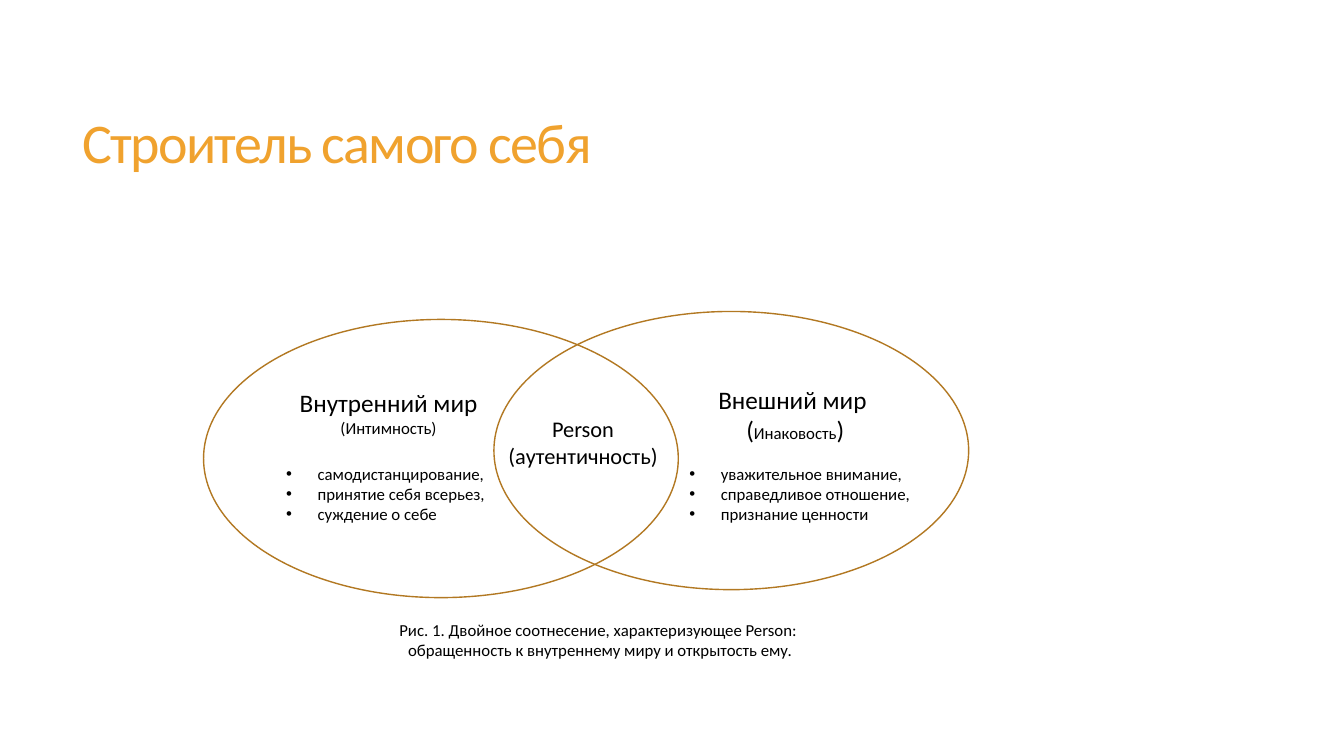
from dataclasses import dataclass

from lxml.etree import SubElement
from pptx import Presentation
from pptx.dml.color import RGBColor
from pptx.enum.shapes import MSO_SHAPE
from pptx.enum.text import MSO_ANCHOR, PP_ALIGN
from pptx.oxml.ns import qn
from pptx.slide import Slide
from pptx.util import Pt

COLORS = {"title": "F0A22E", "outline": "B27822", "paper": "FFFFFF", "text": "000000"}
FONT = "Calibri"
OVAL_W, OVAL_H = 339.1, 198.7
BULLET_INDENT = 22.5


@dataclass
class Run:
    text: str
    size: float = 12
    color: str = "text"
    spacing: float = 0


@dataclass
class TextBlock:
    left: float
    top: float
    width: float
    height: float
    lines: list[list[Run]]
    align: PP_ALIGN = PP_ALIGN.CENTER
    anchor: MSO_ANCHOR = MSO_ANCHOR.TOP
    wrap: bool = True
    bullets: bool = False
    line_spacing: float = 1.0


@dataclass
class Oval:
    left: float
    top: float
    filled: bool


def bullet_block(left: float, width: float, items: list[str]) -> TextBlock:
    return TextBlock(left, 327.6, width, 51.1, [[Run(item)] for item in items],
                     align=PP_ALIGN.LEFT, bullets=True)


OVALS = [Oval(145.4, 228.2, True), Oval(352.8, 222.5, False)]

TEXTS = [
    TextBlock(51.8, 39.6, 848.2, 130.3,
              [[Run("Строитель самого себя", 40, "title", -1.2)]],
              align=PP_ALIGN.LEFT, anchor=MSO_ANCHOR.MIDDLE, line_spacing=0.85),
    TextBlock(346.3, 293, 140.4, 46.1,
              [[Run("Person", 16)], [Run("(аутентичность)", 16)]]),
    TextBlock(205.9, 272.9, 143.3, 43.9,
              [[Run("Внутренний мир", 18)], [Run("(Интимность)")]], wrap=False),
    TextBlock(485.3, 270.7, 165.6, 51.1,
              [[Run("Внешний мир ", 18)],
               [Run("(", 18), Run("Инаковость"), Run(")", 18)]]),
    TextBlock(249.1, 439.2, 359.3, 58.3,
              [[Run("Рис. 1. Двойное соотнесение, характеризующее Person: ")],
               [Run("обращенность к внутреннему миру и открытость ему.")]], wrap=False),
    bullet_block(197.3, 254.2, ["самодистанцирование,", "принятие себя всерьез,",
                                "суждение о себе"]),
    bullet_block(485.3, 181.4, ["уважительное внимание,", "справедливое отношение,",
                                "признание ценности"]),
]


def rgb(name: str) -> RGBColor:
    return RGBColor.from_string(COLORS[name])


def add_oval(s: Slide, oval: Oval) -> None:
    sp = s.shapes.add_shape(MSO_SHAPE.OVAL, Pt(oval.left), Pt(oval.top),
                            Pt(OVAL_W), Pt(OVAL_H))
    sp.shadow.inherit = False
    if oval.filled:
        sp.fill.solid()
        sp.fill.fore_color.rgb = rgb("paper")
    else:
        sp.fill.background()
    sp.line.color.rgb = rgb("outline")
    sp.line.width = Pt(1)


def add_bullet(p) -> None:
    pPr = p._p.get_or_add_pPr()
    pPr.set("marL", str(Pt(BULLET_INDENT)))
    pPr.set("indent", str(-Pt(BULLET_INDENT)))
    SubElement(pPr, qn("a:buFont"), typeface="Arial")
    SubElement(pPr, qn("a:buChar"), char="•")


def add_run(p, run: Run) -> None:
    r = p.add_run()
    r.text = run.text
    r.font.name = FONT
    r.font.size = Pt(run.size)
    r.font.color.rgb = rgb(run.color)
    if run.spacing:
        r._r.get_or_add_rPr().set("spc", str(round(run.spacing * 100)))


def add_text(s: Slide, block: TextBlock) -> None:
    sp = s.shapes.add_textbox(Pt(block.left), Pt(block.top),
                              Pt(block.width), Pt(block.height))
    tf = sp.text_frame
    tf.word_wrap = block.wrap
    tf.vertical_anchor = block.anchor
    for i, line in enumerate(block.lines):
        p = tf.add_paragraph() if i else tf.paragraphs[0]
        p.alignment = block.align
        p.line_spacing = block.line_spacing
        if block.bullets:
            add_bullet(p)
        for run in line:
            add_run(p, run)


def main() -> None:
    prs = Presentation()
    prs.slide_width, prs.slide_height = Pt(960), Pt(540)
    s = prs.slides.add_slide(prs.slide_layouts[6])
    for oval in OVALS:
        add_oval(s, oval)
    for block in TEXTS:
        add_text(s, block)
    prs.save("out.pptx")


if __name__ == "__main__":
    main()
